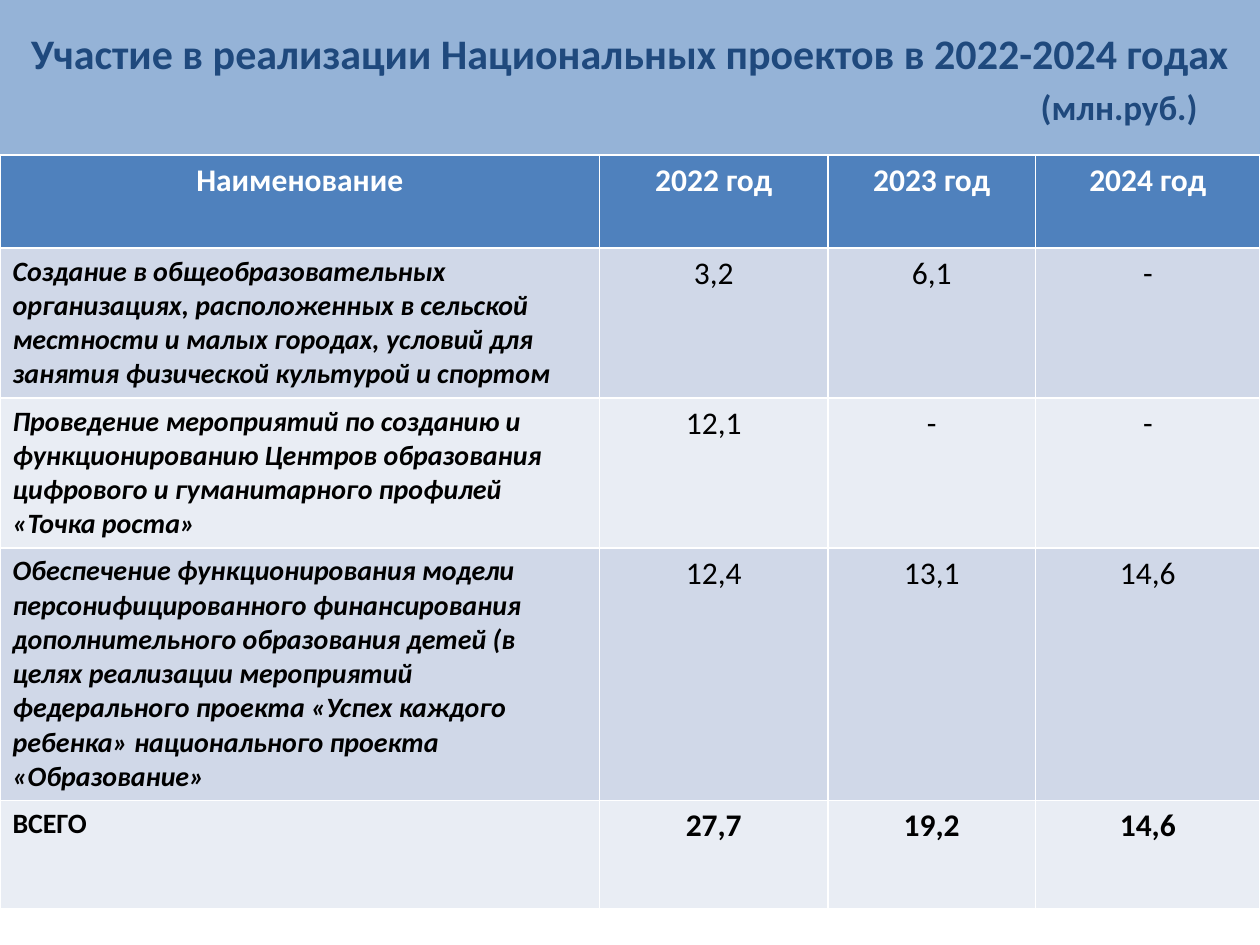
from lxml import etree
from pptx import Presentation
from pptx import util as u
from pptx.dml.color import RGBColor
from pptx.enum import text
from pptx.oxml.ns import qn

BODY = {"name": "Calibri", "size": u.Pt(18), "bold": False, "italic": False}
HEADER = {**BODY, "bold": True}
PROJECT = {**BODY, "size": u.Pt(16), "bold": True, "italic": True}
TOTAL_LABEL = {**PROJECT, "italic": False}
HEADING = {**HEADER, "size": u.Pt(24)}
UNIT = {**HEADER, "size": u.Pt(20)}

COLUMN_WIDTHS = [4.76, 1.81, 1.65, 1.78]
ROW_HEIGHTS = [0.74, 1.19, 1.19, 2, 0.86]
ROWS = [
    ["Наименование", "2022 год", "2023 год", "2024 год"],
    ["Создание в общеобразовательных организациях, расположенных в сельской "
     "местности и малых городах, условий для занятия физической культурой и спортом",
     "3,2", "6,1", "-"],
    ["Проведение мероприятий по созданию и функционированию Центров образования "
     "цифрового и гуманитарного профилей «Точка роста»",
     "12,1", "-", "-"],
    ["Обеспечение функционирования модели персонифицированного финансирования "
     "дополнительного образования детей (в целях реализации мероприятий "
     "федерального проекта «Успех каждого ребенка» национального проекта «Образование»",
     "12,4", "13,1", "14,6"],
    ["ВСЕГО", "27,7", "19,2", "14,6"],
]


def color(value):
    return RGBColor.from_string(value)


class Page:
    def __init__(self, deck):
        self.slide = deck.slides.add_slide(deck.slide_layouts[5])

    def fill(self, item, value):
        item.fill.solid()
        item.fill.fore_color.rgb = color(value)

    def add_span(self, para, words, style, ink, align):
        para.alignment = align
        span = para.add_run()
        span.text = words
        for key, value in style.items():
            setattr(span.font, key, value)
        span.font.color.rgb = color(ink)
        return span

    def outline(self, span, value, points):
        line = etree.Element(qn("a:ln"), w=str(u.Pt(points)))
        solid = etree.SubElement(line, qn("a:solidFill"))
        etree.SubElement(solid, qn("a:srgbClr"), val=value)
        span.font._element.insert(0, line)

    def title(self, heading, unit):
        box = self.slide.shapes.title
        place = {"left": 0, "top": 0, "width": 10, "height": 1.23}
        for key, value in place.items():
            setattr(box, key, u.Inches(value))
        self.fill(box, "95B3D7")
        frame = box.text_frame
        frame.auto_size = text.MSO_AUTO_SIZE.NONE
        frame.vertical_anchor = text.MSO_ANCHOR.MIDDLE
        first, second = frame.paragraphs[0], frame.add_paragraph()
        second.space_before = u.Pt(4)
        second._p.get_or_add_pPr().set("marL", str(u.Inches(8.16)))
        for para, words, style, align in (
            (first, heading, HEADING, text.PP_ALIGN.CENTER),
            (second, unit, UNIT, text.PP_ALIGN.LEFT),
        ):
            span = self.add_span(para, words, style, "1F497D", align)
            self.outline(span, "467AB8", 0.83)

    def cell_style(self, row, column):
        if row == 0:
            return HEADER
        last = row == len(ROWS) - 1
        if column == 0:
            return TOTAL_LABEL if last else PROJECT
        return HEADER if last else BODY

    def table(self, top):
        table = self.slide.shapes.add_table(
            len(ROWS), len(COLUMN_WIDTHS), 0, u.Inches(top),
            u.Inches(sum(COLUMN_WIDTHS)), u.Inches(sum(ROW_HEIGHTS))).table
        for column, width in zip(table.columns, COLUMN_WIDTHS):
            column.width = u.Inches(width)
        for r, (height, values) in enumerate(zip(ROW_HEIGHTS, ROWS)):
            table.rows[r].height = u.Inches(height)
            band = "4F81BD" if r == 0 else ("E9EDF4", "D0D8E8")[r % 2]
            ink = "FFFFFF" if r == 0 else "000000"
            for c, words in enumerate(values):
                cell = table.cell(r, c)
                self.fill(cell, band)
                label = r > 0 and c == 0
                align = text.PP_ALIGN.LEFT if label else text.PP_ALIGN.CENTER
                self.add_span(cell.text_frame.paragraphs[0], words,
                              self.cell_style(r, c), ink, align)


def main():
    deck = Presentation()
    deck.slide_width, deck.slide_height = u.Inches(10), u.Inches(7.5)
    page = Page(deck)
    page.title("Участие в реализации Национальных проектов в 2022-2024 годах",
               "(млн.руб.)")
    page.table(1.23)
    deck.save("out.pptx")


if __name__ == "__main__":
    main()
